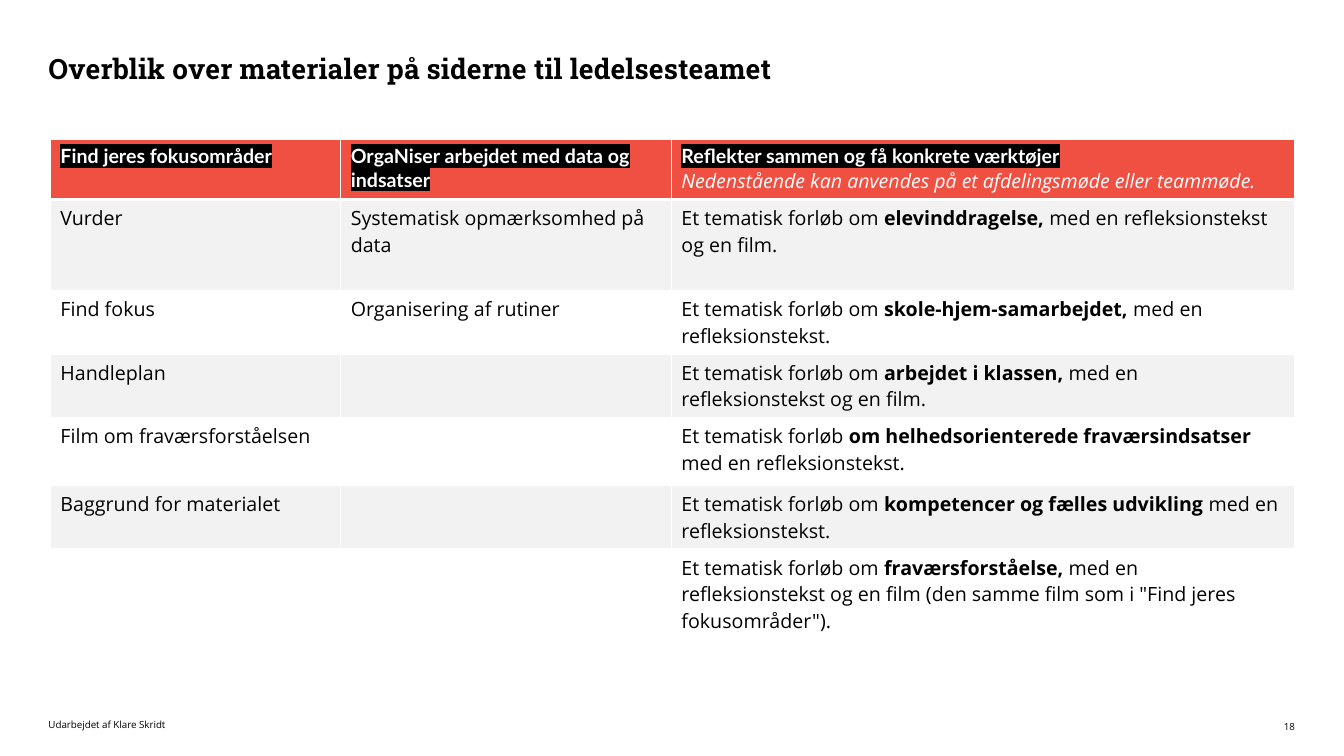
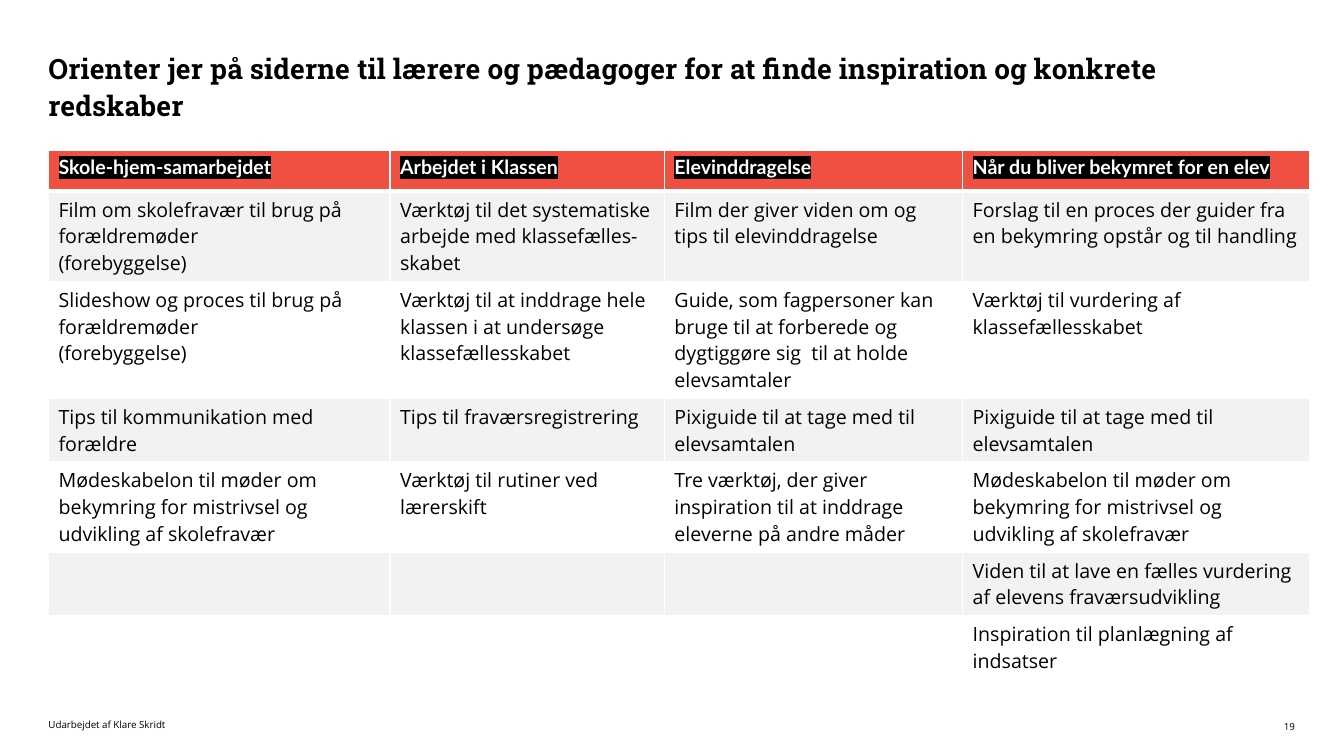
"""Build two overview slides with tables of school absence materials."""
from lxml import etree
from pptx import Presentation
from pptx.dml.color import RGBColor
from pptx.enum.text import MSO_ANCHOR, MSO_AUTO_SIZE, PP_ALIGN
from pptx.oxml.ns import qn
from pptx.util import Pt

TOP, MIDDLE = MSO_ANCHOR.TOP, MSO_ANCHOR.MIDDLE
LEFT, RIGHT = PP_ALIGN.LEFT, PP_ALIGN.RIGHT
NO_AUTOFIT = MSO_AUTO_SIZE.NONE
BLACK, WHITE, RED, GREY = "000000", "FFFFFF", "F05041", "F2F2F2"
BODY_FONT, HEADER_FONT, TITLE_FONT = "Open Sans", "Lato", "Roboto Slab"
TITLE_ONLY = 5
FIRST_PAGE = 18
MARGIN = 34.6
FOOTER = "Udarbejdet af Klare Skridt"


def rgb(color):
    return RGBColor.from_string(color)


def write(paragraph, text, font=BODY_FONT, size=14, color=BLACK, bold=False,
          italic=False, highlight=None, spacing=None, align=LEFT):
    paragraph.alignment = align
    run = paragraph.add_run()
    run.text = text
    run.font.name = font
    run.font.size = Pt(size)
    run.font.bold = bold
    run.font.italic = italic
    run.font.color.rgb = rgb(color)
    properties = run.font._element
    if spacing:
        properties.set("spc", str(round(spacing * 100)))
    if highlight:
        mark = etree.Element(qn("a:highlight"))
        etree.SubElement(mark, qn("a:srgbClr"), val=highlight)
        properties.find(qn("a:solidFill")).addnext(mark)


pages = [
    {
        "title": "Overblik over materialer på siderne til ledelsesteamet",
        "left": 36, "top": 99.4,
        "columns": [207.4, 236.2, 445],
        "heights": [43, 65, 45.4, 45, 48.5, 45, 64.4],
        "headers": [
            "Find jeres fokusområder",
            "OrgaNiser arbejdet med data og indsatser",
            "Reflekter sammen og få konkrete værktøjer",
        ],
        "subheading": "Nedenstående kan anvendes på et afdelingsmøde eller teammøde.",
        "rows": [
            ["Vurder", "Systematisk opmærksomhed på data",
             "Et tematisk forløb om **elevinddragelse, **med en refleksionstekst og en film."],
            ["Find fokus", "Organisering af rutiner",
             "Et tematisk forløb om **skole-hjem-samarbejdet, **med en refleksionstekst."],
            ["Handleplan", "",
             "Et tematisk forløb om **arbejdet i klassen, **med en refleksionstekst og en film."],
            ["Film om fraværsforståelsen", "",
             "Et tematisk forløb **om helhedsorienterede fraværsindsatser **med en refleksionstekst."],
            ["Baggrund for materialet", "",
             "Et tematisk forløb om **kompetencer og fælles udvikling **med en refleksionstekst."],
            ["", "",
             "Et tematisk forløb om **fraværsforståelse, **med en refleksionstekst og en film "
             "(den samme film som i \"Find jeres fokusområder\")."],
        ],
    },
    {
        "title": "Orienter jer på siderne til lærere og pædagoger for at finde "
                 "inspiration og konkrete redskaber",
        "left": MARGIN, "top": 107.5,
        "columns": [244, 196, 213, 248],
        "heights": [29, 64.4, 83.6, 45, 64.4, 45, 45],
        "headers": ["Skole-hjem-samarbejdet", "Arbejdet i Klassen", "Elevinddragelse",
                    "Når du bliver bekymret for en elev"],
        "subheading": "",
        "rows": [
            ["Film om skolefravær til brug på forældremøder\n(forebyggelse)",
             "Værktøj til det systematiske arbejde med klassefælles- skabet",
             "Film der giver viden om og tips til elevinddragelse",
             "Forslag til en proces der guider fra en bekymring opstår og til handling"],
            ["Slideshow og proces til brug på forældremøder\n(forebyggelse)",
             "Værktøj til at inddrage hele klassen i at undersøge klassefællesskabet",
             "Guide, som fagpersoner kan bruge til at forberede og dygtiggøre sig  til at "
             "holde elevsamtaler",
             "Værktøj til vurdering af klassefællesskabet"],
            ["Tips til kommunikation med forældre", "Tips til fraværsregistrering",
             "Pixiguide til at tage med til elevsamtalen",
             "Pixiguide til at tage med til elevsamtalen"],
            ["Mødeskabelon til møder om bekymring for mistrivsel og udvikling af skolefravær",
             "Værktøj til rutiner ved lærerskift",
             "Tre værktøj, der giver inspiration til at inddrage eleverne på andre måder",
             "Mødeskabelon til møder om bekymring for mistrivsel og udvikling af skolefravær"],
            ["", "", "", "Viden til at lave en fælles vurdering af elevens fraværsudvikling"],
            ["", "", "", "Inspiration til planlægning af indsatser"],
        ],
    },
]

prs = Presentation()
prs.slide_width, prs.slide_height = Pt(960), Pt(540)
layout = prs.slide_layouts[TITLE_ONLY]

for number, page in enumerate(pages, FIRST_PAGE):
    slide = prs.slides.add_slide(layout)
    title = slide.shapes.title
    title.left, title.top, title.width, title.height = Pt(MARGIN), Pt(34.6), Pt(862), Pt(90.7)
    heading = title.text_frame
    heading.margin_left = heading.margin_right = heading.margin_top = heading.margin_bottom = 0
    heading.vertical_anchor = TOP
    heading.auto_size = NO_AUTOFIT
    heading.word_wrap = True
    heading.paragraphs[0].line_spacing = 1.1
    write(heading.paragraphs[0], page["title"], font=TITLE_FONT, size=20, bold=True, spacing=0.1)

    columns, heights = page["columns"], page["heights"]
    table = slide.shapes.add_table(
        len(heights), len(columns), Pt(page["left"]), Pt(page["top"]),
        Pt(sum(columns)), Pt(sum(heights))).table
    for column, width in zip(table.columns, columns):
        column.width = Pt(width)
    for row, height in zip(table.rows, heights):
        row.height = Pt(height)

    for r, texts in enumerate([page["headers"]] + page["rows"]):
        for c, text in enumerate(texts):
            cell = table.cell(r, c)
            borders = cell._tc.get_or_add_tcPr()
            for side in ("lnL", "lnR", "lnT", "lnB"):
                beside_header = (r, side) in ((0, "lnB"), (1, "lnT"))
                line = etree.SubElement(borders, qn("a:" + side),
                                        w=str(Pt(3 if beside_header else 1)))
                fill = etree.SubElement(line, qn("a:solidFill"))
                etree.SubElement(fill, qn("a:srgbClr"), val=WHITE)
            cell.fill.solid()
            cell.fill.fore_color.rgb = rgb(RED if r == 0 else GREY if r % 2 else WHITE)
            frame = cell.text_frame
            if r == 0:
                write(frame.paragraphs[0], text, font=HEADER_FONT, color=WHITE, bold=True,
                      highlight=BLACK)
                if page["subheading"] and c == len(columns) - 1:
                    write(frame.add_paragraph(), page["subheading"], color=WHITE, italic=True)
            elif text:
                for i, entry in enumerate(text.split("\n")):
                    paragraph = frame.add_paragraph() if i else frame.paragraphs[0]
                    for part, words in enumerate(entry.split("**")):
                        write(paragraph, words, bold=part % 2 == 1)

    for text, left, width, height, align in (
            (FOOTER, MARGIN, 110, 8.6, LEFT), (str(number), 897, 28, 11.5, RIGHT)):
        note = slide.shapes.add_textbox(Pt(left), Pt(513.4), Pt(width), Pt(height)).text_frame
        note.margin_left = note.margin_right = note.margin_top = note.margin_bottom = 0
        note.vertical_anchor = MIDDLE
        note.word_wrap = True
        write(note.paragraphs[0], text, size=7, align=align)

prs.save("out.pptx")
